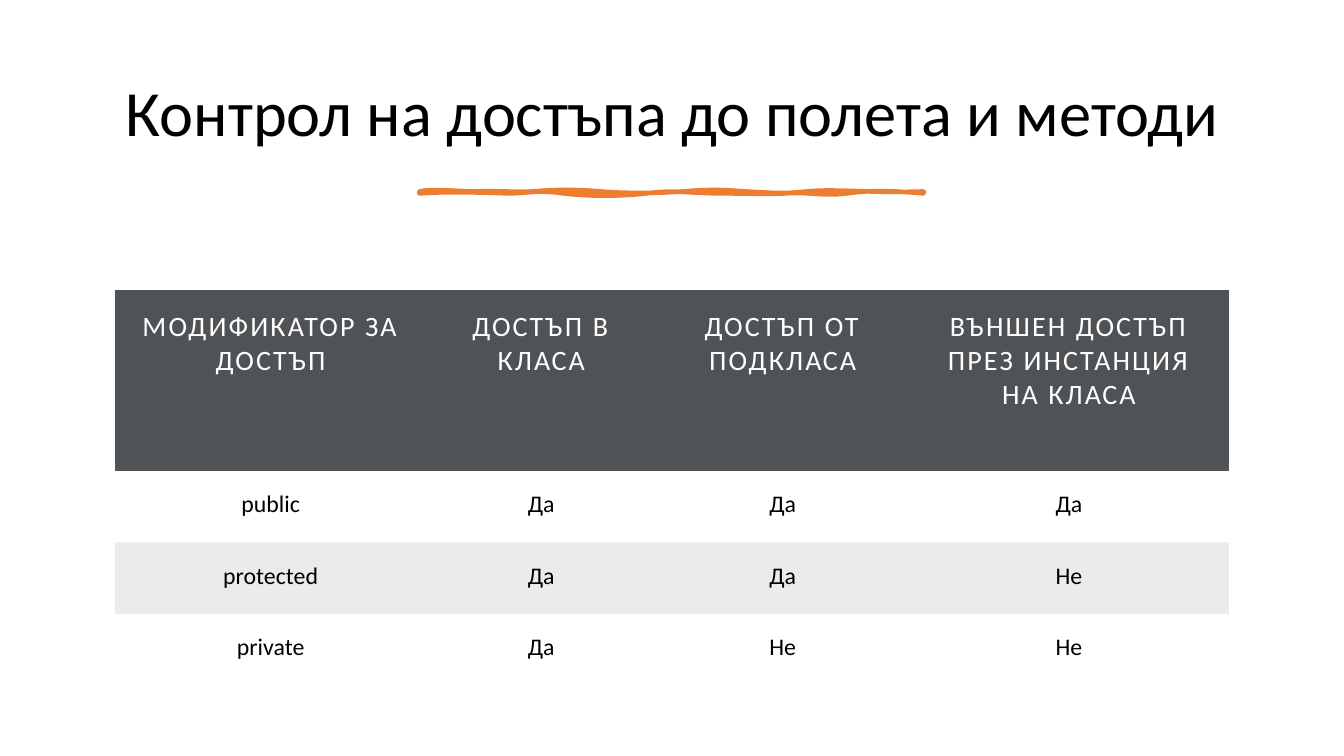
from dataclasses import dataclass
from typing import Any

from lxml import etree
from pptx import Presentation, util as u
from pptx.dml.color import RGBColor
from pptx.enum import text as t
from pptx.oxml import ns

SLIDE_W, SLIDE_H = u.Inches(13.333), u.Inches(7.5)


@dataclass(frozen=True)
class Theme:
    font: str = "Calibri"
    ink: str = "000000"
    paper: str = "FFFFFF"
    accent: str = "ED7D31"
    header: str = "505356"
    band_alpha: int = 8
    title_size: int = 46
    header_size: int = 20
    body_size: int = 17
    header_spacing: float = 1.5
    accent_line: float = 3.25


@dataclass(frozen=True)
class Area:
    """A rectangle in percent of the slide's width and height."""
    left: float
    top: float
    width: float
    height: float

    def emu(self) -> tuple[int, int, int, int]:
        return (int(SLIDE_W * self.left / 100), int(SLIDE_H * self.top / 100),
                int(SLIDE_W * self.width / 100), int(SLIDE_H * self.height / 100))


@dataclass(frozen=True)
class RowStyle:
    size: int
    color: str
    fill: str | None = None
    alpha: int = 100
    spacing: float = 0


THEME = Theme()
TITLE_AREA = Area(5.25, 6.13, 89.48, 18.27)
UNDERLINE_AREA = Area(31.2, 25.33, 37.5, 0.27)
TABLE_AREA = Area(8.55, 38.4, 82.88, 52.27)
COLUMN_SHARES = (3.09, 2.28, 2.51, 3.17)
ROW_SHARES = (1.79, 0.71, 0.71, 0.71)
CELL_INSET = u.Inches(0.19)
PLAIN_TABLE_STYLE = "{2D5ABB26-0587-4C30-8999-92F81FD0307C}"

HEADER = RowStyle(THEME.header_size, THEME.paper, THEME.header,
                  spacing=THEME.header_spacing)
PLAIN = RowStyle(THEME.body_size, THEME.ink)
BANDED = RowStyle(THEME.body_size, THEME.ink, THEME.ink, THEME.band_alpha)

ACCESS_ROWS = (
    (HEADER, ("МОДИФИКАТОР ЗА ДОСТЪП", "ДОСТЪП В КЛАСА", "ДОСТЪП ОТ ПОДКЛАСА",
              "ВЪНШЕН ДОСТЪП ПРЕЗ ИНСТАНЦИЯ НА КЛАСА")),
    (PLAIN, ("public", "Да", "Да", "Да")),
    (BANDED, ("protected", "Да", "Да", "Не")),
    (PLAIN, ("private", "Да", "Не", "Не")),
)

# Cubic curve points around the brush stroke, in hundredths of an inch
STROKE_OUTLINE = (
    (0, 0), (12, -3), (38, 0), (57, 0), (76, -1), (93, 1), (113, 0),
    (133, -2), (158, -2), (180, 0), (201, 2), (237, 2), (261, 0),
    (286, -2), (298, -2), (323, 0), (347, 1), (358, 3), (384, 0),
    (410, -3), (451, 2), (500, 0), (501, 1), (500, 1), (500, 2),
    (479, 0), (449, -2), (424, 2), (399, 5), (385, 0), (363, 2),
    (340, 3), (331, 2), (301, 2), (271, 2), (251, -2), (225, 2),
    (198, 5), (169, 5), (143, 2), (118, -2), (107, 2), (87, 2),
    (67, 1), (22, 0), (0, 2), (0, 1), (0, 0), (0, 0),
)


def set_all(target: Any, values: dict[str, Any]) -> None:
    for name, value in values.items():
        setattr(target, name, value)


def format_font(font: Any, size: int, color: str) -> None:
    set_all(font, {"name": THEME.font, "size": u.Pt(size), "bold": False})
    font.color.rgb = RGBColor.from_string(color)


def add_title(slide: Any, wording: str) -> None:
    title = slide.shapes.title
    set_all(title, dict(zip(("left", "top", "width", "height"), TITLE_AREA.emu())))
    set_all(title.text_frame, {"text": wording, "word_wrap": True,
                               "auto_size": t.MSO_AUTO_SIZE.NONE,
                               "vertical_anchor": t.MSO_ANCHOR.MIDDLE})
    line = title.text_frame.paragraphs[0]
    set_all(line, {"alignment": t.PP_ALIGN.CENTER, "line_spacing": 0.9})
    format_font(line.runs[0].font, THEME.title_size, THEME.ink)


def sample_curve(points: tuple, steps: int = 8) -> list[tuple[float, float]]:
    """Turn a chain of cubic curves into short straight segments."""
    sampled = []
    for first in range(0, len(points) - 1, 3):
        curve = points[first:first + 4]
        for step in range(1, steps + 1):
            b = step / steps
            a = 1 - b
            weights = (a ** 3, 3 * a * a * b, 3 * a * b * b, b ** 3)
            sampled.append(tuple(sum(w * p[axis] for w, p in zip(weights, curve))
                                 for axis in (0, 1)))
    return sampled


def add_underline(slide: Any) -> None:
    left, top, width, _ = UNDERLINE_AREA.emu()
    unit = width / 500
    builder = slide.shapes.build_freeform(left, top)
    builder.add_line_segments([(left + x * unit, top + y * unit)
                               for x, y in sample_curve(STROKE_OUTLINE)])
    underline = builder.convert_to_shape()
    underline.shadow.inherit = False
    accent = RGBColor.from_string(THEME.accent)
    underline.fill.solid()
    underline.fill.fore_color.rgb = accent
    underline.line.color.rgb = accent
    underline.line.width = u.Pt(THEME.accent_line)


def fill_cell(cell: Any, wording: str, style: RowStyle) -> None:
    set_all(cell, {"text": wording, "vertical_anchor": t.MSO_ANCHOR.TOP}
            | {f"margin_{side}": CELL_INSET
               for side in ("left", "top", "right", "bottom")})
    line = cell.text_frame.paragraphs[0]
    line.alignment = t.PP_ALIGN.CENTER
    run = line.runs[0]
    format_font(run.font, style.size, style.color)
    run.font._element.set("spc", str(int(style.spacing * 100)))
    if style.fill is None:
        cell.fill.background()
        return
    cell.fill.solid()
    cell.fill.fore_color.rgb = RGBColor.from_string(style.fill)
    if style.alpha < 100:
        color = cell._tc.tcPr.find(".//" + ns.qn("a:srgbClr"))
        etree.SubElement(color, ns.qn("a:alpha")).set("val", str(style.alpha * 1000))


def add_access_table(slide: Any) -> None:
    area = TABLE_AREA.emu()
    table = slide.shapes.add_table(len(ROW_SHARES), len(COLUMN_SHARES), *area).table
    set_all(table, {"first_row": True, "horz_banding": False})
    table._tbl.tblPr.find(ns.qn("a:tableStyleId")).text = PLAIN_TABLE_STYLE
    for column, share in zip(table.columns, COLUMN_SHARES):
        column.width = int(area[2] * share / sum(COLUMN_SHARES))
    for row, share, (style, wordings) in zip(table.rows, ROW_SHARES, ACCESS_ROWS):
        row.height = int(area[3] * share / sum(ROW_SHARES))
        for cell, wording in zip(row.cells, wordings):
            fill_cell(cell, wording, style)


def main() -> None:
    deck = Presentation()
    set_all(deck, {"slide_width": SLIDE_W, "slide_height": SLIDE_H})
    slide = deck.slides.add_slide(deck.slide_layouts[5])
    add_title(slide, "Контрол на достъпа до полета и методи")
    add_underline(slide)
    add_access_table(slide)
    deck.save("out.pptx")


if __name__ == "__main__":
    main()
